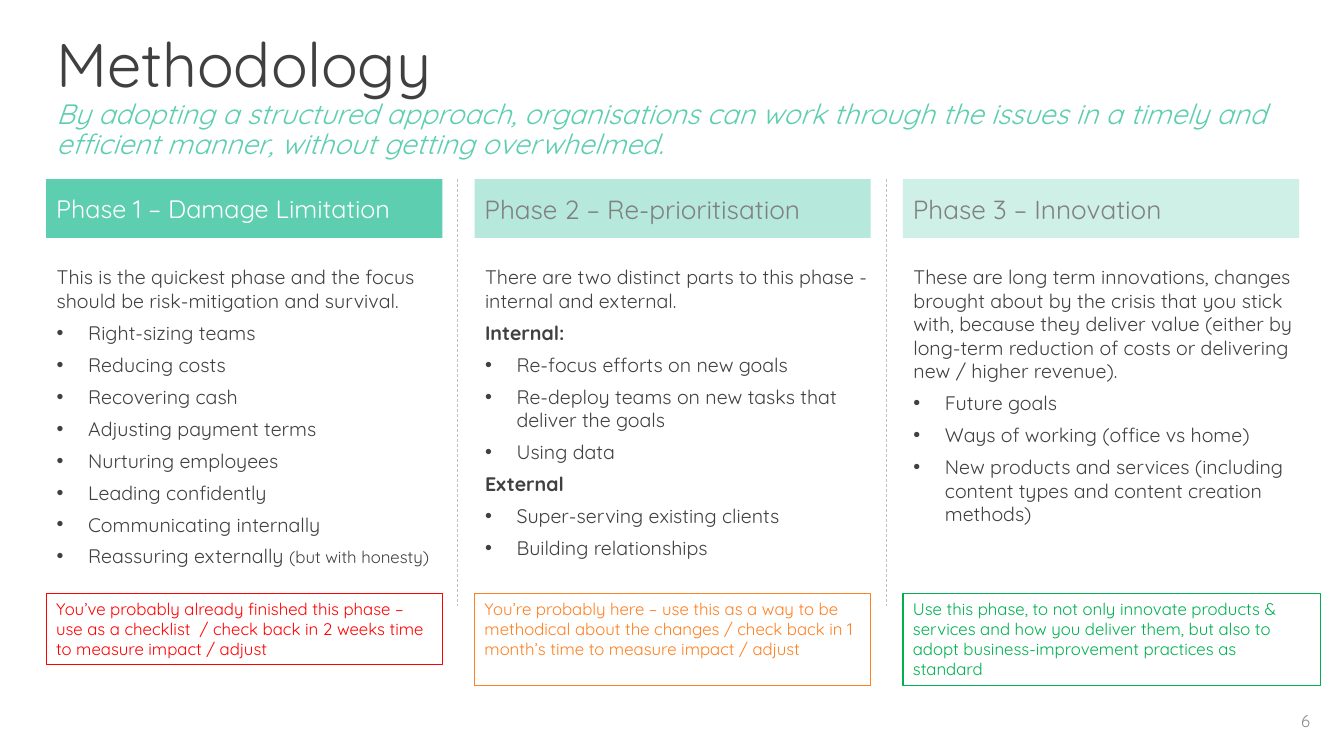
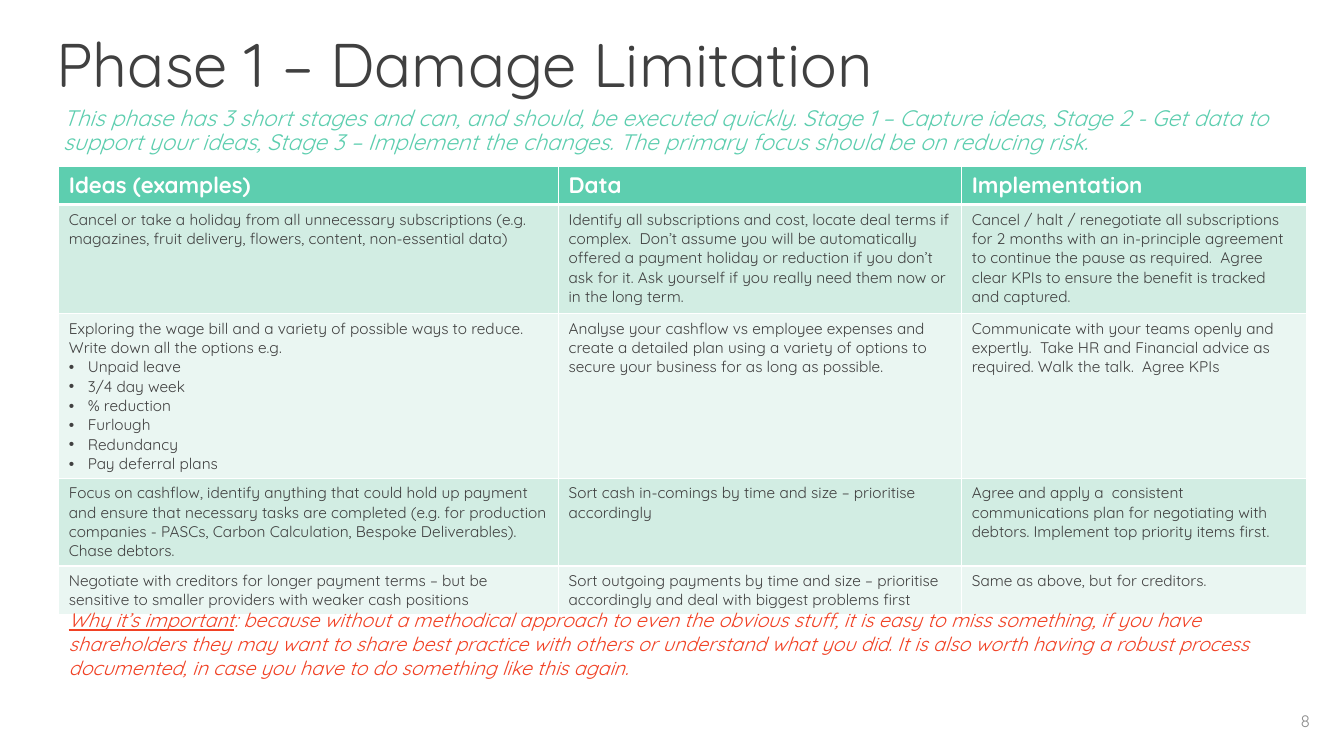
"""Build the methodology overview and the phase 1 detail slide."""
import dataclasses

import pptx
import pptx.dml.color
import pptx.enum.dml
import pptx.enum.shapes
import pptx.enum.text
import pptx.oxml
import pptx.oxml.ns
import pptx.util

Pt = pptx.util.Pt
RGB = pptx.dml.color.RGBColor.from_string
ALIGN = pptx.enum.text.PP_ALIGN
ANCHOR = pptx.enum.text.MSO_ANCHOR
RECTANGLE = pptx.enum.shapes.MSO_SHAPE.RECTANGLE
STRAIGHT = pptx.enum.shapes.MSO_CONNECTOR.STRAIGHT
NSDECLS = pptx.oxml.ns.nsdecls("a")


@dataclasses.dataclass(frozen=True)
class Theme:
    font: str = "Quicksand"
    ink: str = "404040"
    muted: str = "808080"
    number: str = "8C8C8C"
    white: str = "FFFFFF"
    mint: str = "5DCEAF"
    pale_mint: str = "9EE2CF"
    row_bands: tuple = ("D2EDE3", "EAF6F2")
    divider: str = "BFBFBF"
    done: str = "FF0000"
    current: str = "FF8021"
    upcoming: str = "00B050"
    warning: str = "F14124"
    title_size: float = 44
    tagline_size: float = 20
    active_phase_size: float = 18
    phase_size: float = 18.7
    lead_size: float = 16
    body_size: float = 14
    small_size: float = 12
    cell_size: float = 11


@dataclasses.dataclass(frozen=True)
class Line:
    text: str
    bullet: bool = False
    bold: bool = False
    aside: str = ""


@dataclasses.dataclass(frozen=True)
class Phase:
    name: str
    fill: str
    opacity: int
    name_color: str
    name_size: float
    lines: list
    advice: str
    advice_color: str
    advice_width: float
    advice_height: float


def bullets(*texts):
    return [Line(text, bullet=True) for text in texts]


class Deck:
    def __init__(self, theme):
        self.theme = theme
        self.presentation = pptx.Presentation()
        self.presentation.slide_width = Pt(960)
        self.presentation.slide_height = Pt(540)
        self.slide = None

    def style(self, run, size, color, bold=False, italic=False, underline=False):
        run.font.name = self.theme.font
        run.font.size = Pt(size)
        run.font.color.rgb = RGB(color)
        run.font.bold = bold
        run.font.italic = italic
        run.font.underline = underline

    def frame(self, shape, anchor=ANCHOR.TOP):
        text_frame = shape.text_frame
        text_frame.word_wrap = True
        text_frame.auto_size = pptx.enum.text.MSO_AUTO_SIZE.NONE
        text_frame.vertical_anchor = anchor
        return text_frame

    def put_text(self, text_frame, text, size, color, align=ALIGN.LEFT, **look):
        text_frame.text = text
        paragraph = text_frame.paragraphs[0]
        paragraph.alignment = align
        self.style(paragraph.runs[0], size, color, **look)
        return paragraph

    def put_lines(self, text_frame, lines, size, margin, hang, gap):
        text_frame.text = "\n".join(line.text for line in lines)
        for paragraph, line in zip(text_frame.paragraphs, lines):
            properties = paragraph._p.get_or_add_pPr()
            properties.set("marL", str(Pt(margin + hang * line.bullet)))
            properties.set("indent", str(Pt(-hang * line.bullet)))
            if line.bullet:
                for tag in ('buFont typeface="Arial"', 'buChar char="•"'):
                    name = tag.split()[0]
                    properties.append(pptx.oxml.parse_xml(
                        f"<a:{name} {NSDECLS}{tag[len(name):]}/>"))
            paragraph.space_after = Pt(gap)
            self.style(paragraph.runs[0], size, self.theme.ink, bold=line.bold)
            if line.aside:
                aside = paragraph.add_run()
                aside.text = line.aside
                self.style(aside, self.theme.small_size, self.theme.ink)

    def text_box(self, left, top, width, height, anchor=ANCHOR.TOP):
        box = self.slide.shapes.add_textbox(Pt(left), Pt(top), Pt(width), Pt(height))
        return self.frame(box, anchor)

    def start(self, title, number, height, tagline=""):
        theme = self.theme
        self.slide = self.presentation.slides.add_slide(self.presentation.slide_layouts[5])
        heading = self.slide.shapes.title
        heading.left, heading.top = Pt(33), Pt(17)
        heading.width, heading.height = Pt(895), Pt(height)
        text_frame = self.frame(heading, ANCHOR.MIDDLE)
        text = f"{title}\v{tagline}" if tagline else title
        paragraph = self.put_text(text_frame, text, theme.title_size, theme.ink)
        paragraph.line_spacing = 0.9
        for run in paragraph.runs[1:]:
            self.style(run, theme.tagline_size, theme.mint, italic=True)
        page = self.text_box(727, 500, 216, 29, ANCHOR.MIDDLE)
        self.put_text(page, number, theme.small_size, theme.number, ALIGN.RIGHT)

    def panel(self, left, top, width, height, anchor, fill=None, opacity=100, outline=None):
        shape = self.slide.shapes.add_shape(RECTANGLE, Pt(left), Pt(top), Pt(width), Pt(height))
        shape.shadow.inherit = False
        if fill:
            shape.fill.solid()
            shape.fill.fore_color.rgb = RGB(fill)
            if opacity < 100:
                color = next(shape._element.spPr.iter(pptx.oxml.ns.qn("a:srgbClr")))
                color.append(pptx.oxml.parse_xml(f'<a:alpha {NSDECLS} val="{opacity * 1000}"/>'))
        else:
            shape.fill.background()
        if outline:
            shape.line.color.rgb = RGB(outline)
            shape.line.width = Pt(0.75)
        else:
            shape.line.fill.background()
        return self.frame(shape, anchor)

    def divider(self, x, top, bottom):
        line = self.slide.shapes.add_connector(STRAIGHT, Pt(x), Pt(top), Pt(x), Pt(bottom))
        line.line.color.rgb = RGB(self.theme.divider)
        line.line.width = Pt(0.5)
        line.line.dash_style = pptx.enum.dml.MSO_LINE.DASH
        line._element.spPr.append(pptx.oxml.parse_xml(f"<a:effectLst {NSDECLS}/>"))

    def phase(self, phase, left):
        theme = self.theme
        name = self.panel(left, 128, 283, 42, ANCHOR.MIDDLE, phase.fill, phase.opacity)
        self.put_text(name, phase.name, phase.name_size, phase.name_color)
        details = self.text_box(left, 189.5, 283, 230)
        details.margin_left = details.margin_right = 0
        details.margin_top = details.margin_bottom = 0
        self.put_lines(details, phase.lines, theme.body_size, margin=7.5, hang=22.5, gap=6)
        advice = self.panel(left, 424, phase.advice_width, phase.advice_height, ANCHOR.TOP,
                            outline=phase.advice_color)
        self.put_text(advice, phase.advice, theme.small_size, phase.advice_color)

    def lead(self, text):
        intro = self.text_box(38, 73, 906, 51)
        paragraph = self.put_text(intro, text, self.theme.lead_size, self.theme.mint, italic=True)
        paragraph.line_spacing = 0.9

    def cell(self, cell, fill, bottom_width):
        properties = cell._tc.get_or_add_tcPr()
        for side, width in (("L", 1), ("R", 1), ("T", 1), ("B", bottom_width)):
            properties.append(pptx.oxml.parse_xml(
                f'<a:ln{side} {NSDECLS} w="{Pt(width)}"><a:solidFill>'
                f'<a:srgbClr val="{self.theme.white}"/></a:solidFill></a:ln{side}>'))
        cell.fill.solid()
        cell.fill.fore_color.rgb = RGB(fill)

    def table(self, left, top, widths, heights, headings, rows):
        theme = self.theme
        table = self.slide.shapes.add_table(len(heights), len(widths), Pt(left), Pt(top),
                                            Pt(sum(widths)), Pt(sum(heights))).table
        for column, width in zip(table.columns, widths):
            column.width = Pt(width)
        for row, height in zip(table.rows, heights):
            row.height = Pt(height)
        for column, heading in enumerate(headings):
            cell = table.cell(0, column)
            self.cell(cell, theme.mint, 3)
            self.put_text(cell.text_frame, heading, theme.lead_size, theme.white, bold=True)
        for index, row in enumerate(rows):
            for column, content in enumerate(row):
                cell = table.cell(index + 1, column)
                self.cell(cell, theme.row_bands[index % 2], 1)
                lines = [Line(content)] if isinstance(content, str) else content
                self.put_lines(cell.text_frame, lines, theme.cell_size, margin=0, hang=13.5, gap=0)

    def reason(self, label, text):
        theme = self.theme
        note = self.text_box(42, 431, 891, 58)
        paragraph = self.put_text(note, label, theme.body_size, theme.warning,
                                  italic=True, underline=True)
        explanation = paragraph.add_run()
        explanation.text = text
        self.style(explanation, theme.body_size, theme.warning, italic=True)


THEME = Theme()
PHASES = [
    Phase("Phase 1 – Damage Limitation", THEME.mint, 100, THEME.white, THEME.active_phase_size,
          [Line("This is the quickest phase and the focus should be risk-mitigation and survival."),
           *bullets("Right-sizing teams", "Reducing costs", "Recovering cash",
                    "Adjusting payment terms", "Nurturing employees", "Leading confidently",
                    "Communicating internally"),
           Line("Reassuring externally ", bullet=True, aside="(but with honesty)")],
          "You’ve probably already finished this phase – use as a checklist  / check back in "
          "2 weeks time to measure impact / adjust", THEME.done, 283, 51),
    Phase("Phase 2 – Re-prioritisation", THEME.pale_mint, 75, THEME.muted, THEME.phase_size,
          [Line("There are two distinct parts to this phase - internal and external."),
           Line("Internal:", bold=True),
           *bullets("Re-focus efforts on new goals",
                    "Re-deploy teams on new tasks that deliver the goals", "Using data"),
           Line("External", bold=True),
           *bullets("Super-serving existing clients", "Building relationships")],
          "You’re probably here – use this as a way to be methodical about the changes / check "
          "back in 1 month’s time to measure impact / adjust", THEME.current, 283, 65.5),
    Phase("Phase 3 – Innovation", THEME.pale_mint, 50, THEME.muted, THEME.phase_size,
          [Line("These are long term innovations, changes brought about by the crisis that you "
                "stick with, because they deliver value (either by long-term reduction of costs "
                "or delivering new / higher revenue)."),
           *bullets("Future goals", "Ways of working (office vs home)",
                    "New products and services (including content types and content creation "
                    "methods)")],
          "Use this phase, to not only innovate products & services and how you deliver them, "
          "but also to adopt business-improvement practices as standard",
          THEME.upcoming, 298, 65.5),
]
ACTIONS = [
    ("Cancel or take a holiday from all unnecessary subscriptions (e.g. magazines, fruit "
     "delivery, flowers, content, non-essential data)",
     "Identify all subscriptions and cost, locate deal terms if complex.  Don’t assume you will "
     "be automatically offered a payment holiday or reduction if you don’t ask for it. Ask "
     "yourself if you really need them now or in the long term.",
     "Cancel / halt / renegotiate all subscriptions for 2 months with an in-principle agreement "
     "to continue the pause as required.  Agree clear KPIs to ensure the benefit is tracked and "
     "captured."),
    ([Line("Exploring the wage bill and a variety of possible ways to reduce.  Write down all "
           "the options e.g."),
      *bullets("Unpaid leave", "3/4 day week", "% reduction", "Furlough", "Redundancy",
               "Pay deferral plans")],
     "Analyse your cashflow vs employee expenses and create a detailed plan using a variety of "
     "options to secure your business for as long as possible.",
     "Communicate with your teams openly and expertly.  Take HR and Financial advice as "
     "required. Walk the talk.  Agree KPIs"),
    ("Focus on cashflow, identify anything that could hold up payment and ensure that necessary "
     "tasks are completed (e.g. for production companies - PASCs, Carbon Calculation, Bespoke "
     "Deliverables). Chase debtors.",
     "Sort cash in-comings by time and size – prioritise accordingly",
     "Agree and apply a  consistent communications plan for negotiating with debtors. Implement "
     "top priority items first."),
    ("Negotiate with creditors for longer payment terms – but be sensitive to smaller providers "
     "with weaker cash positions",
     "Sort outgoing payments by time and size – prioritise accordingly and deal with biggest "
     "problems first",
     "Same as above, but for creditors."),
]


def main():
    deck = Deck(THEME)
    deck.start("Methodology", "6", 105,
               "By adopting a structured approach, organisations can work through the issues in "
               "a timely and efficient manner, without getting overwhelmed.")
    for index, phase in enumerate(PHASES):
        left = 33 + 306 * index
        deck.phase(phase, left)
        if index:
            deck.divider(left - 12, 128, 433)

    deck.start("Phase 1 – Damage Limitation", "8", 62)
    deck.lead("This phase has 3 short stages and can, and should, be executed quickly. Stage 1 – "
              "Capture ideas, Stage 2 - Get data to support your ideas, Stage 3 – Implement the "
              "changes. The primary focus should be on reducing risk.")
    deck.table(42, 119, (357, 288, 246), (24, 78, 102, 54, 30),
               ("Ideas (examples)", "Data", "Implementation"), ACTIONS)
    deck.reason("Why it’s important",
                ": because without a methodical approach to even the obvious stuff, it is easy to "
                "miss something, if you have shareholders they may want to share best practice "
                "with others or understand what you did. It is also worth having a robust process "
                "documented, in case you have to do something like this again.")
    deck.presentation.save("out.pptx")


if __name__ == "__main__":
    main()
